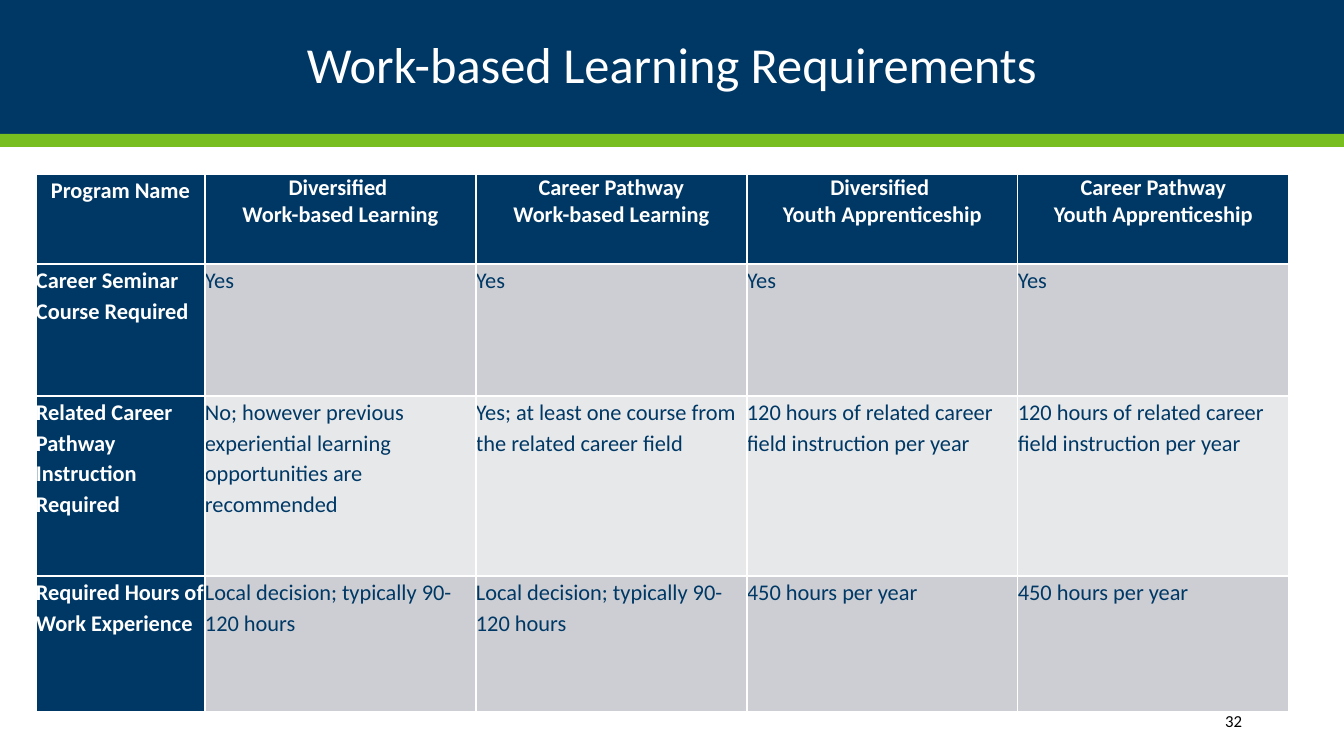
from pptx import Presentation
from pptx import util as u
from pptx.dml.color import RGBColor
from pptx.enum import shapes, text

PX_PER_INCH = 100.8
FONT = "Calibri"
COLOURS = {
    "navy": "003865",
    "green": "78BE21",
    "white": "FFFFFF",
    "black": "000000",
    "dark band": "CCCED3",
    "light band": "E7E8EA",
}
HEADINGS = [
    "Program Name",
    "Diversified \nWork-based Learning",
    "Career Pathway\nWork-based Learning",
    "Diversified \nYouth Apprenticeship",
    "Career Pathway\nYouth Apprenticeship",
]
REQUIREMENTS = [
    ["Career Seminar Course Required", "Yes", "Yes", "Yes", "Yes"],
    [
        "Related Career Pathway Instruction Required ",
        "No; however previous experiential learning opportunities are recommended",
        "Yes; at least one course from the related career field ",
        "120 hours of related career field instruction per year",
        "120 hours of related career field instruction per year",
    ],
    [
        "Required Hours of Work Experience",
        "Local decision; typically 90-120 hours",
        "Local decision; typically 90-120 hours",
        "450 hours per year",
        "450 hours per year",
    ],
]
COLUMN_WIDTHS = [169] + [271] * 4
ROW_HEIGHTS = [90, 132, 180, 136]


def px(length):
    return u.Emu(round(length * u.Inches(1) / PX_PER_INCH))


def colour(name):
    return RGBColor.from_string(COLOURS[name])


def fill(target, name):
    target.fill.solid()
    target.fill.fore_color.rgb = colour(name)


def format_text(frame, size, colour_name, alignment, bold=False):
    for paragraph in frame.paragraphs:
        paragraph.alignment = alignment
        for run in paragraph.runs:
            run.font.name = FONT
            run.font.size = u.Pt(size)
            run.font.bold = bold
            run.font.color.rgb = colour(colour_name)


def add_header(slide, left, top, width, height):
    """Fill the box with the title band and the green stripe below it."""
    stripe_height = 13
    band_height = height - stripe_height
    title = slide.shapes.title
    title.left, title.top = px(left), px(top)
    title.width, title.height = px(width), px(band_height)
    fill(title, "navy")
    frame = title.text_frame
    frame.text = "Work-based Learning Requirements"
    frame.vertical_anchor = text.MSO_ANCHOR.MIDDLE
    frame.margin_left = frame.margin_right = px(91)
    frame.paragraphs[0].line_spacing = 0.9
    format_text(frame, 36, "white", text.PP_ALIGN.CENTER)

    stripe = slide.shapes.add_shape(
        shapes.MSO_SHAPE.RECTANGLE,
        px(left), px(top + band_height), px(width), px(stripe_height),
    )
    stripe.shadow.inherit = False
    fill(stripe, "green")
    stripe.line.fill.background()


def fill_cell(cell, content, row, column):
    is_label = row == 0 or column == 0
    cell.margin_left = cell.margin_right = 0
    cell.margin_top = cell.margin_bottom = 0
    fill(cell, "navy" if is_label else "dark band" if row % 2 else "light band")
    frame = cell.text_frame
    frame.text = content
    format_text(
        frame, 16,
        "white" if is_label else "navy",
        text.PP_ALIGN.LEFT if row else text.PP_ALIGN.CENTER,
        bold=is_label,
    )
    if row or column == 0:
        paragraph = frame.paragraphs[0]
        paragraph.line_spacing = 1.12
        paragraph.space_before = paragraph.space_after = u.Pt(10)


def add_requirements_table(slide, left, top):
    rows = [HEADINGS] + REQUIREMENTS
    table = slide.shapes.add_table(
        len(rows), len(HEADINGS),
        px(left), px(top), px(sum(COLUMN_WIDTHS)), px(sum(ROW_HEIGHTS)),
    ).table
    table.horz_banding = False
    for column, width in zip(table.columns, COLUMN_WIDTHS):
        column.width = px(width)
    for row, height in zip(table.rows, ROW_HEIGHTS):
        row.height = px(height)
    for row, contents in enumerate(rows):
        for column, content in enumerate(contents):
            fill_cell(table.cell(row, column), content, row, column)


def add_page_number(slide, left, top, width, height):
    box = slide.shapes.add_textbox(px(left), px(top), px(width), px(height))
    frame = box.text_frame
    frame.word_wrap = True
    frame.vertical_anchor = text.MSO_ANCHOR.MIDDLE
    frame.text = "32"
    format_text(frame, 12, "black", text.PP_ALIGN.RIGHT)


def main():
    presentation = Presentation()
    presentation.slide_width, presentation.slide_height = px(1344), px(756)
    slide = presentation.slides.add_slide(presentation.slide_layouts[5])
    add_header(slide, 0, 0, 1344, 147)
    add_requirements_table(slide, 36, 174)
    add_page_number(slide, 1091, 701, 161, 40)
    presentation.save("out.pptx")


if __name__ == "__main__":
    main()
